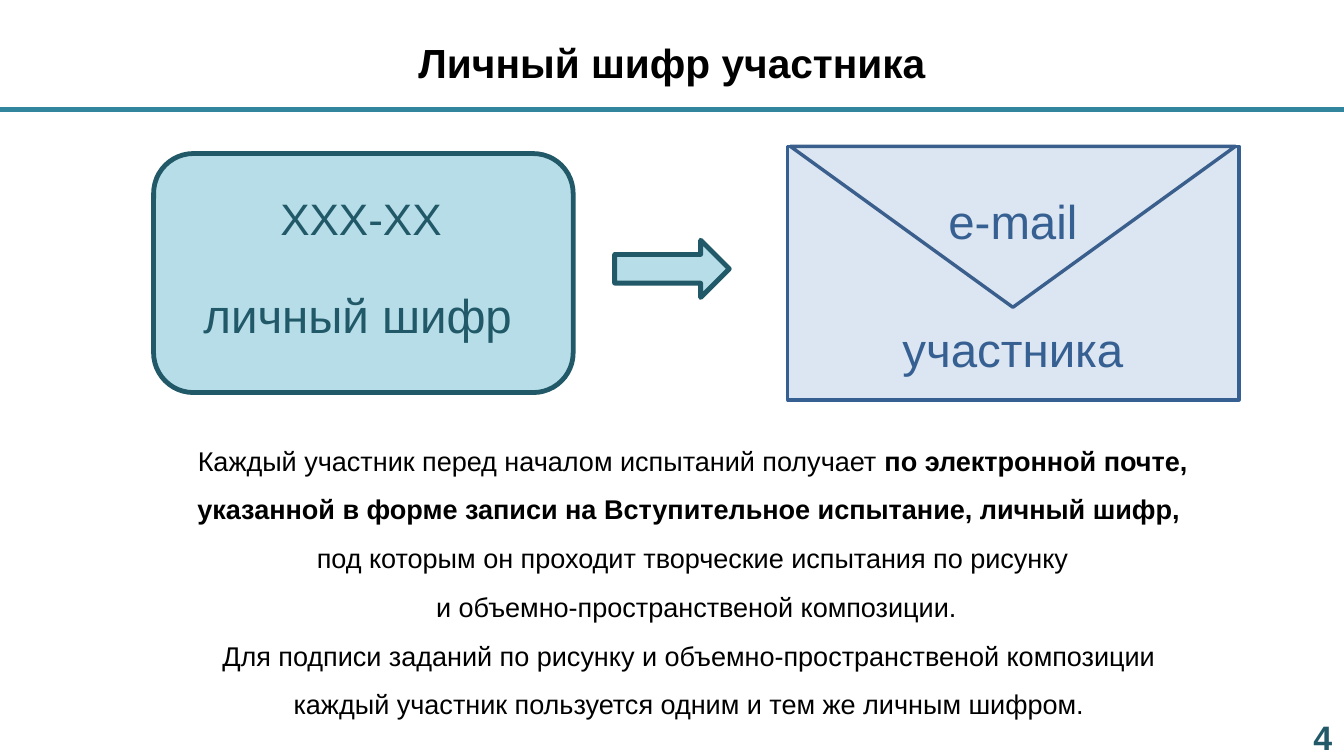
from pptx import Presentation
from pptx.dml.color import RGBColor
from pptx.enum.shapes import MSO_CONNECTOR, MSO_SHAPE
from pptx.enum.text import MSO_ANCHOR, PP_ALIGN
from pptx.oxml.ns import qn
from pptx.util import Inches, Pt
from lxml.etree import SubElement

COLORS = {
    "black": "000000",
    "teal": "31859C",
    "dark_teal": "215968",
    "light_teal": "B7DEE8",
    "blue": "376092",
    "flap_blue": "3A5F8C",
    "light_blue": "DCE6F2",
}

prs = Presentation()
prs.slide_width, prs.slide_height = Inches(11.02), Inches(6.2)
slide = prs.slides.add_slide(prs.slide_layouts[6])


def add_text(paragraphs, left, top, width, height, size, color="black", bold=False,
             align=PP_ALIGN.CENTER, anchor=MSO_ANCHOR.TOP, spacing=1.0,
             inset=(0.1, 0.05), wrap=True):
    """Each paragraph is a list of (text, bold) runs, or a plain string."""
    box = slide.shapes.add_textbox(Inches(left), Inches(top), Inches(width), Inches(height))
    frame = box.text_frame
    frame.word_wrap = wrap
    frame.vertical_anchor = anchor
    frame.margin_left = frame.margin_right = Inches(inset[0])
    frame.margin_top = frame.margin_bottom = Inches(inset[1])
    for i, runs in enumerate(paragraphs):
        paragraph = frame.add_paragraph() if i else frame.paragraphs[0]
        paragraph.alignment = align
        paragraph.line_spacing = spacing
        for text, run_bold in [(runs, bold)] if isinstance(runs, str) else runs:
            run = paragraph.add_run()
            run.text = text
            run.font.name = "Arial"
            run.font.size = Pt(size)
            run.font.bold = run_bold
            run.font.color.rgb = RGBColor.from_string(COLORS[color])


def add_figure(kind, left, top, width, height, fill, line, weight):
    figure = slide.shapes.add_shape(
        kind, Inches(left), Inches(top), Inches(width), Inches(height))
    figure.shadow.inherit = False
    figure.fill.solid()
    figure.fill.fore_color.rgb = RGBColor.from_string(COLORS[fill])
    figure.line.color.rgb = RGBColor.from_string(COLORS[line])
    figure.line.width = Pt(weight)
    return figure


# Heading
add_text(["Личный шифр участника"], 0.55, 0.31, 9.92, 0.4, 24, bold=True,
         anchor=MSO_ANCHOR.MIDDLE, inset=(0, 0))
divider = slide.shapes.add_connector(
    MSO_CONNECTOR.STRAIGHT, 0, Inches(0.9), prs.slide_width, Inches(0.9))
divider.line.color.rgb = RGBColor.from_string(COLORS["teal"])
divider.line.width = Pt(2.83)
SubElement(divider._element.spPr, qn("a:effectLst"))

# Personal code card and arrow
add_figure(MSO_SHAPE.ROUNDED_RECTANGLE, 1.26, 1.26, 3.44, 1.96,
           "light_teal", "dark_teal", 2.83)
add_text(["ХХХ-ХХ"], 2.2, 1.52, 1.97, 0.53, 26, "dark_teal", align=PP_ALIGN.LEFT)
add_text(["личный шифр"], 1.57, 2.3, 2.83, 0.56, 28, "dark_teal", align=PP_ALIGN.LEFT)
add_figure(MSO_SHAPE.RIGHT_ARROW, 5.04, 1.97, 0.94, 0.47, "light_teal", "dark_teal", 2.83)

# Envelope
add_figure(MSO_SHAPE.RECTANGLE, 6.46, 1.2, 3.7, 2.08, "light_blue", "blue", 2)
flap = add_figure(MSO_SHAPE.FLOWCHART_EXTRACT, 6.48, 1.2, 3.65, 1.32,
                  "light_blue", "flap_blue", 2)
flap.rotation = 180
add_text(["e-mail"], 7.4, 1.53, 1.81, 0.56, 28, "blue")
add_text(["участника"], 7.3, 2.58, 2.01, 0.56, 28, "blue", wrap=False)

# Explanation
add_text([
    [("Каждый участник перед началом испытаний получает ", False),
     ("по электронной почте,", True)],
    [("указанной в форме записи на Вступительное испытание, личный шифр, ", True)],
    "под которым он проходит творческие испытания по рисунку",
    " и объемно-пространственой композиции.",
    "Для подписи заданий по рисунку и объемно-пространственой композиции ",
    "каждый участник пользуется одним и тем же личным шифром. ",
], 0.72, 3.46, 9.92, 2.52, 16, spacing=1.5)

# Page number
add_text(["4"], 10.67, 5.83, 0.35, 0.37, 20, "dark_teal", bold=True,
         align=PP_ALIGN.LEFT, wrap=False)

prs.save("out.pptx")
